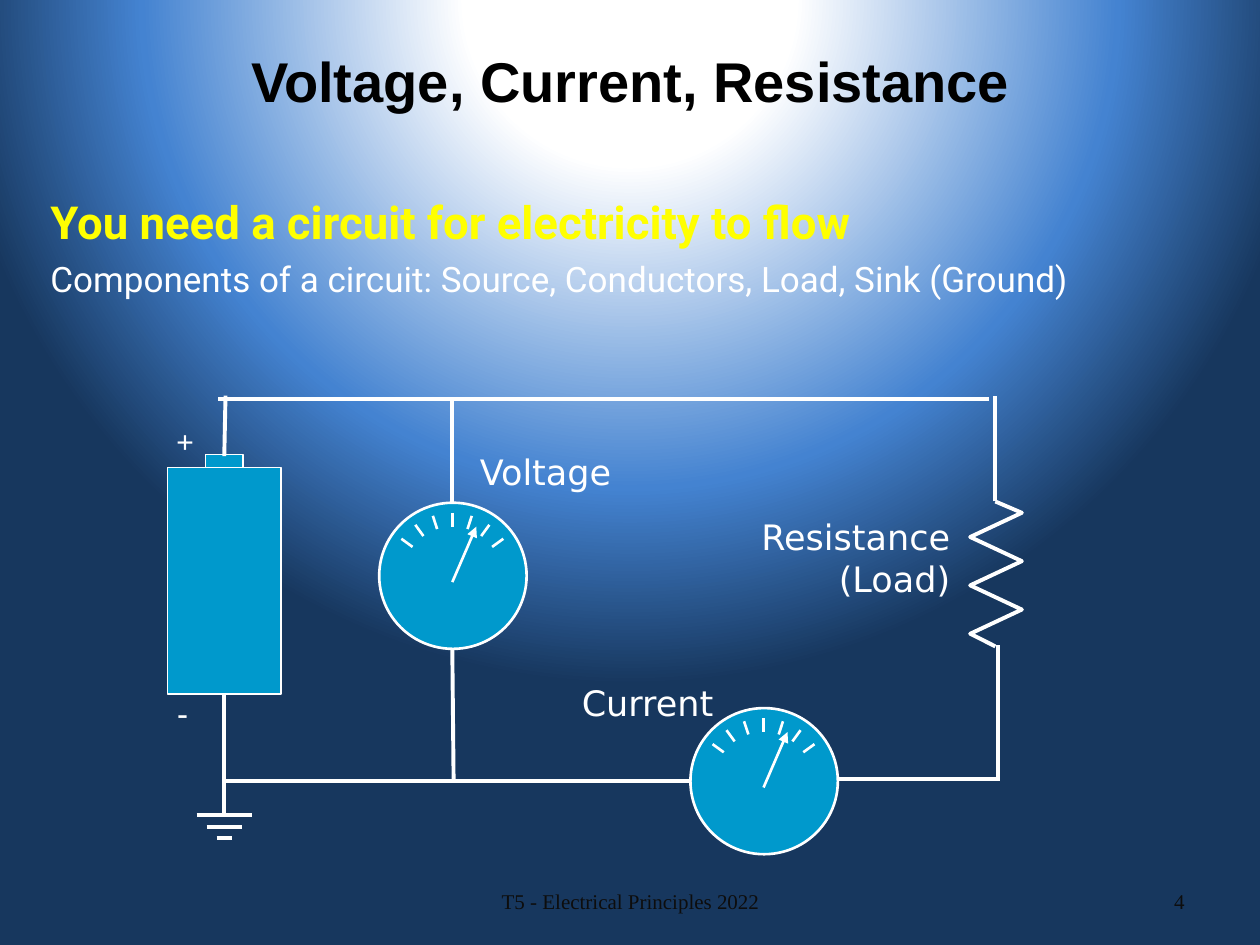
from dataclasses import dataclass
from math import cos, radians, sin

from lxml import etree
from pptx import Presentation
from pptx.dml.color import RGBColor
from pptx.enum import shapes as kinds, text as enums
from pptx.oxml import parse_xml
from pptx.oxml.ns import nsdecls, qn
from pptx.util import Inches, Pt

HUES = {"white": "FFFFFF", "sky": "4483D1", "navy": "17375E", "cyan": "0099CC",
        "yellow": "FFFF00", "black": "000000", "ink": "0D0D0D"}
LEFT, MID, RIGHT = (enums.PP_ALIGN.LEFT, enums.PP_ALIGN.CENTER, enums.PP_ALIGN.RIGHT)
TIMES, SANS = "Times New Roman", "DejaVu Sans"


@dataclass
class Line:
    x1: float
    y1: float
    x2: float
    y2: float
    width: float = 2.25
    arrow: bool = False


@dataclass
class Label:
    text: str
    box: tuple[float, float, float, float]
    size: float
    font: str
    align: int = LEFT
    hue: str = "white"
    bold: bool = False
    before: float = 0
    middle: bool = False


@dataclass
class Meter:
    x: float
    y: float


WIRES = [
    Line(7.9, 3.98, 7.9, 3.14), Line(7.92, 5.12, 7.92, 6.2),
    Line(7.85, 3.17, 1.73, 3.17), Line(1.78, 3.62, 1.79, 3.14),
    Line(7.91, 6.18, 6.64, 6.18), Line(3.59, 3.99, 3.59, 3.15),
    Line(5.48, 6.2, 1.77, 6.2), Line(1.78, 5.51, 1.78, 6.46),
    Line(3.59, 5.16, 3.6, 6.19),
]
GROUND = [Line(1.78 - half, y, 1.78 + half, y)
          for half, y in ((0.22, 6.47), (0.14, 6.56), (0.06, 6.65))]
METERS = [Meter(3.59, 4.57), Meter(6.06, 6.2)]
LABELS = [
    Label("+", (1.3, 3.3, 0.36, 0.4), 18, TIMES, bold=True, before=11.2),
    Label("-", (1.31, 5.45, 0.46, 0.4), 18, TIMES, bold=True, before=11.2),
    Label("Voltage", (3.71, 3.53, 1.46, 0.44), 20, SANS, before=12.5),
    Label("Current", (4.43, 5.36, 1.42, 0.44), 20, SANS, MID, before=12.5),
    Label("Resistance\n(Load)", (5.89, 4.04, 1.75, 0.77), 20, SANS, RIGHT, before=12.5),
    Label("4", (7.17, 6.95, 2.33, 0.4), 12, TIMES, RIGHT, "ink", middle=True),
    Label("T5 - Electrical Principles 2022", (3.42, 6.95, 3.17, 0.4), 12, TIMES,
          MID, "ink", middle=True),
]


def rgb(hue: str) -> RGBColor:
    return RGBColor.from_string(HUES[hue])


def place(shape, box: tuple) -> None:
    shape.left, shape.top, shape.width, shape.height = map(Inches, box)


def style(para, size: float, font: str, hue: str, bold: bool, before: float = 0) -> None:
    para.font.size, para.font.name, para.font.bold = Pt(size), font, bold
    para.font.color.rgb = rgb(hue)
    para.space_before = Pt(before)


def paint(slide) -> None:
    """Set the radial background, centred above the slide."""
    stops = "".join(f'<a:gs pos="{pos}000"><a:srgbClr val="{HUES[hue]}"/></a:gs>'
                    for pos, hue in ((21, "white"), (62, "sky"), (87, "navy")))
    slide.element.cSld.insert(0, parse_xml(
        f'<p:bg {nsdecls("p", "a")}><p:bgPr><a:gradFill rotWithShape="1">'
        f'<a:gsLst>{stops}</a:gsLst><a:path path="circle">'
        '<a:fillToRect l="50000" t="-80000" r="50000" b="180000"/></a:path>'
        '</a:gradFill><a:effectLst/></p:bgPr></p:bg>'))


def draw(tree, line: Line) -> None:
    wire = tree.add_connector(kinds.MSO_CONNECTOR.STRAIGHT,
                              *map(Inches, (line.x1, line.y1, line.x2, line.y2)))
    wire.line.color.rgb = rgb("white")
    wire.line.width = Pt(line.width)
    if line.arrow:
        etree.SubElement(wire.line._get_or_add_ln(), qn("a:tailEnd"), type="triangle")
    etree.SubElement(wire._element.spPr, qn("a:effectLst"))


def solid(tree, kind, box: tuple, width: float) -> None:
    shape = tree.add_shape(kind, *map(Inches, box))
    shape.shadow.inherit = False
    shape.fill.solid()
    shape.fill.fore_color.rgb = rgb("cyan")
    shape.line.color.rgb = rgb("white")
    shape.line.width = Pt(width)


def dial(tree, meter: Meter) -> None:
    """Draw a meter: disc, seven ticks 18 degrees apart, and needle."""
    group = tree.add_group_shape().shapes
    x, y = meter.x, meter.y
    solid(group, kinds.MSO_SHAPE.OVAL, (x - 0.58, y - 0.58, 1.17, 1.16), 1.5)
    for step in range(-3, 4):
        dx, dy = sin(radians(18 * step)), -cos(radians(18 * step))
        draw(group, Line(x + 0.5 * dx, y + 0.5 * dy, x + 0.39 * dx, y + 0.39 * dy, 1.5))
    draw(group, Line(x, y + 0.05, x + 0.19, y - 0.39, 1.5, True))


def zigzag(tree) -> None:
    turns = [(8.11 if i % 2 == 0 else 7.7, 4.07 + 0.192 * i) for i in range(6)]
    path = tree.build_freeform(Inches(7.9), Inches(3.98))
    path.add_line_segments([(Inches(x), Inches(y)) for x, y in turns + [(7.9, 5.13)]],
                           close=False)
    shape = path.convert_to_shape()
    shape.shadow.inherit = False
    shape.fill.background()
    shape.line.color.rgb = rgb("white")
    shape.line.width = Pt(2.25)


def write(tree, label: Label) -> None:
    frame = tree.add_textbox(*map(Inches, label.box)).text_frame
    frame.word_wrap = True
    if label.middle:
        frame.vertical_anchor = enums.MSO_ANCHOR.MIDDLE
    para = frame.paragraphs[0]
    para.text, para.alignment = label.text, label.align
    style(para, label.size, label.font, label.hue, label.bold, label.before)


def head(slide) -> None:
    """Fill the title and body placeholders."""
    title, body = slide.shapes.title, slide.placeholders[1]
    place(title, (0.17, 0, 9.67, 1.27))
    title.text_frame.vertical_anchor = enums.MSO_ANCHOR.MIDDLE
    para = title.text_frame.paragraphs[0]
    para.text, para.alignment = "Voltage, Current, Resistance", MID
    style(para, 32, "Arial", "black", True)

    place(body, (0.29, 1.49, 9.4, 1.28))
    rows = [("You need a circuit for electricity to flow", 26, "yellow", True, 6.5),
            ("Components of a circuit: Source, Conductors, Load, Sink (Ground)",
             20, "white", False, 5)]
    frame = body.text_frame
    frame.text = "\n".join(row[0] for row in rows)
    for para, (_, size, hue, bold, gap) in zip(frame.paragraphs, rows):
        style(para, size, "Roboto", hue, bold, gap)
        props = para._p.get_or_add_pPr()
        props.set("marL", str(Inches(0.38)))
        props.set("indent", str(Inches(-0.37)))
        props.insert_element_before(parse_xml(f'<a:buNone {nsdecls("a")}/>'),
                                    "a:tabLst", "a:defRPr", "a:extLst")


def main() -> None:
    deck = Presentation()
    deck.slide_width, deck.slide_height = Inches(10), Inches(7.5)
    slide = deck.slides.add_slide(deck.slide_layouts[1])
    tree = slide.shapes
    paint(slide)
    head(slide)
    zigzag(tree)
    for box in ((1.33, 3.71, 0.9, 1.8), (1.63, 3.61, 0.3, 0.1)):
        solid(tree, kinds.MSO_SHAPE.RECTANGLE, box, 0.75)
    for meter in METERS:
        dial(tree, meter)
    for line in WIRES + GROUND:
        draw(tree, line)
    for label in LABELS:
        write(tree, label)
    deck.save("out.pptx")


if __name__ == "__main__":
    main()
